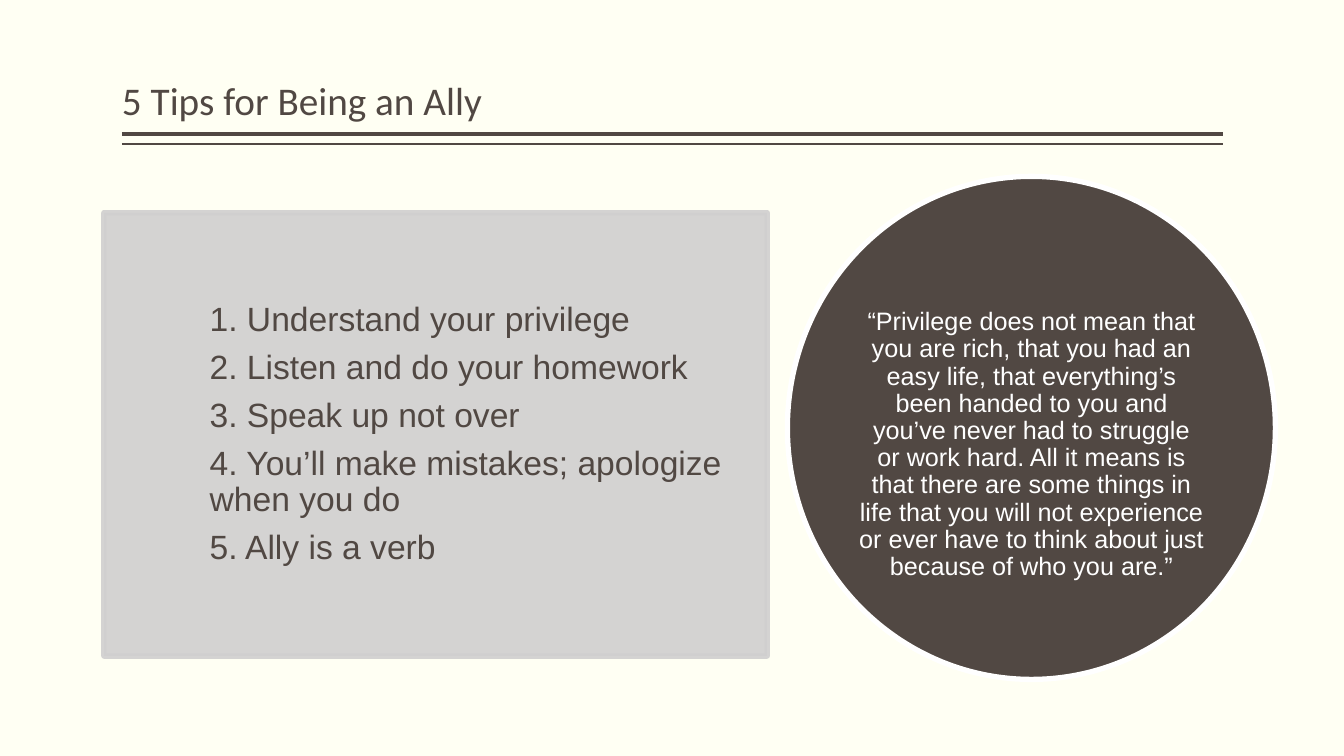
import pptx
import pptx.util
import pptx.dml.color
import pptx.enum.shapes
import pptx.enum.text
import pptx.oxml
import pptx.oxml.ns

Inches = pptx.util.Inches
Pt = pptx.util.Pt
RGBColor = pptx.dml.color.RGBColor
Shape = pptx.enum.shapes.MSO_SHAPE
Anchor = pptx.enum.text.MSO_ANCHOR
Align = pptx.enum.text.PP_ALIGN
qn = pptx.oxml.ns.qn

CREAM = RGBColor(0xFF, 0xFF, 0xF3)
BROWN = RGBColor(0x51, 0x48, 0x43)
GRAY = RGBColor(0xD0, 0xCF, 0xCF)
WHITE = RGBColor(0xFF, 0xFF, 0xFF)

TIPS = [
    "1. Understand your privilege",
    "2. Listen and do your homework",
    "3. Speak up not over",
    "4. You’ll make mistakes; apologize when you do",
    "5. Ally is a verb",
]
QUOTE = (
    "“Privilege does not mean that you are rich, that you had an easy life, "
    "that everything’s been handed to you and you’ve never had to struggle "
    "or work hard. All it means is that there are some things in life that "
    "you will not experience or ever have to think about just because of "
    "who you are.”"
)


def add_text(slide, box, lines, font, size, color, anchor, insets,
             align=Align.LEFT, after=0):
    frame = slide.shapes.add_textbox(*map(Inches, box)).text_frame
    frame.word_wrap = True
    frame.vertical_anchor = anchor
    (frame.margin_left, frame.margin_top,
     frame.margin_right, frame.margin_bottom) = map(Inches, insets)
    frame.text = "\n".join(lines)
    for para in frame.paragraphs:
        para.alignment = align
        para.line_spacing = 0.9
        para.space_after = Pt(after)
        for run in para.runs:
            run.font.name = font
            run.font.size = Pt(size)
            run.font.color.rgb = color


def add_panel(slide, kind, box, fill, edge):
    panel = slide.shapes.add_shape(kind, *map(Inches, box))
    panel.shadow.inherit = False
    panel.fill.solid()
    panel.fill.fore_color.rgb = fill
    panel.line.color.rgb = edge
    panel.line.width = Pt(3.78)
    return panel


def add_rule(slide, left, right, y, width):
    rule = slide.shapes.add_connector(
        pptx.enum.shapes.MSO_CONNECTOR.STRAIGHT,
        Inches(left), Inches(y), Inches(right), Inches(y))
    rule.line.color.rgb = BROWN
    rule.line.width = Pt(width)
    pptx.oxml.ns.qn
    rule._element.spPr.append(pptx.oxml.parse_xml(
        '<a:effectLst xmlns:a='
        '"http://schemas.openxmlformats.org/drawingml/2006/main"/>'))


def add_header(slide, left, top, width, height):
    add_text(slide, (left, top, width, height), ["5 Tips for Being an Ally"],
             "Calibri", 28, BROWN, Anchor.BOTTOM, (0, 0.05, 0, 0.05))
    base = top + height
    add_rule(slide, left, left + width, base + 0.05, 3)
    add_rule(slide, left, left + width, base + 0.15, 1)


def add_tips(slide, left, top, width, height):
    panel = add_panel(slide, Shape.RECTANGLE, (left, top, width, height),
                      GRAY, GRAY)
    for color in panel._element.spPr.iter(qn("a:srgbClr")):
        color.append(pptx.oxml.parse_xml(
            '<a:alpha val="90000" xmlns:a='
            '"http://schemas.openxmlformats.org/drawingml/2006/main"/>'))
    indent = 1.05
    add_text(slide, (left + indent, top, width - indent, height), TIPS,
             "Arial", 24, BROWN, Anchor.MIDDLE, (0, 0.19, 0.19, 0.19),
             after=8.4)


def add_quote(slide, left, top, width, height):
    add_panel(slide, Shape.OVAL, (left, top, width, height), BROWN, WHITE)
    inset = 0.71
    add_text(slide,
             (left + inset, top + 0.73, width - 2 * inset, height - 2 * 0.73),
             [QUOTE], "Arial", 18, WHITE, Anchor.MIDDLE, (0, 0.34, 0, 0),
             Align.CENTER, 6.3)


def main():
    deck = pptx.Presentation()
    deck.slide_width = Inches(13.33)
    deck.slide_height = Inches(7.5)
    slide = deck.slides.add_slide(deck.slide_layouts[6])
    slide.background.fill.solid()
    slide.background.fill.fore_color.rgb = CREAM
    add_header(slide, 1.21, 0.08, 10.92, 1.2)
    add_tips(slide, 1.03, 2.11, 6.58, 4.4)
    add_quote(slide, 7.81, 1.75, 4.84, 4.99)
    deck.save("out.pptx")


if __name__ == "__main__":
    main()
